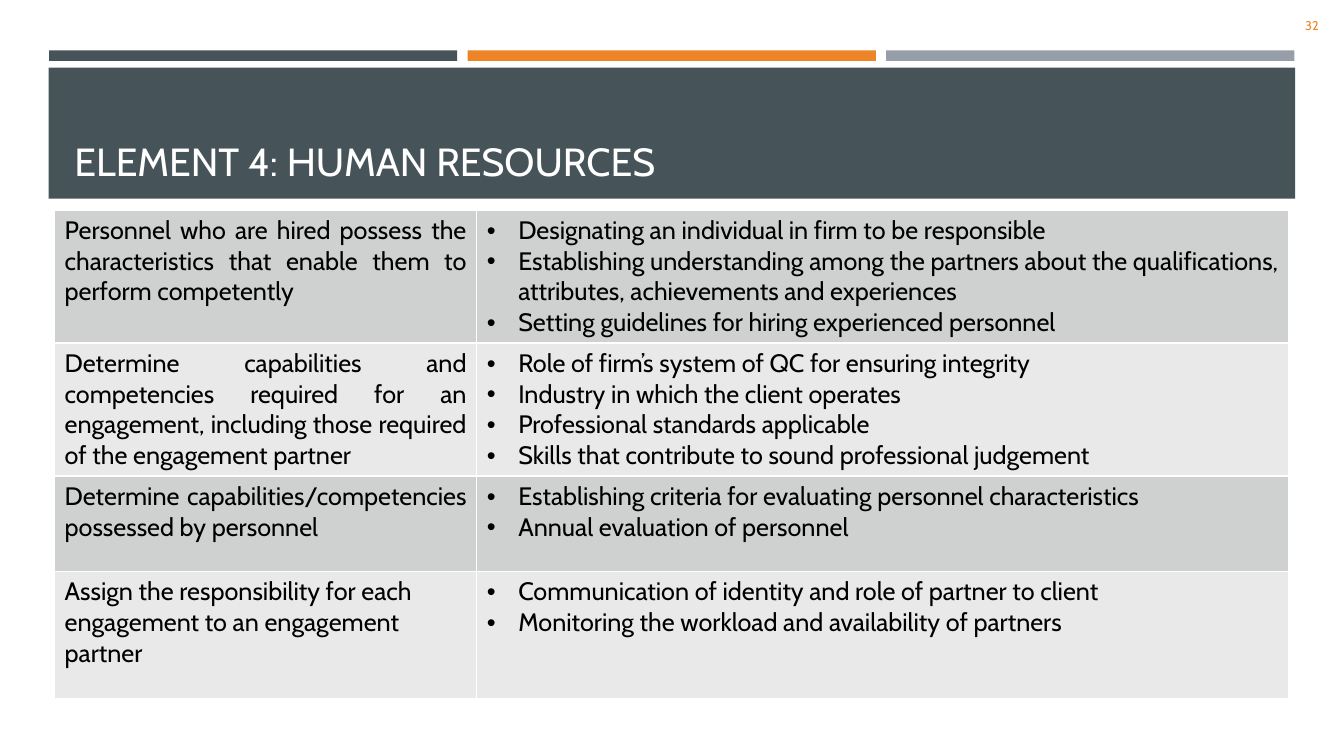
from lxml import etree
from pptx import Presentation
from pptx.dml.color import RGBColor
from pptx.enum.shapes import MSO_SHAPE
from pptx.enum.text import MSO_ANCHOR, MSO_AUTO_SIZE, PP_ALIGN
from pptx.oxml import parse_xml
from pptx.oxml.ns import nsdecls, qn
from pptx.util import Pt

RECT = MSO_SHAPE.RECTANGLE
MIDDLE, BOTTOM, TOP = MSO_ANCHOR.MIDDLE, MSO_ANCHOR.BOTTOM, MSO_ANCHOR.TOP
LEFT, RIGHT, JUSTIFY = PP_ALIGN.LEFT, PP_ALIGN.RIGHT, PP_ALIGN.JUSTIFY
NO_AUTOFIT = MSO_AUTO_SIZE.NONE

COLORS = {
    "slate": "465359", "orange": "ED8428", "gray": "969FA7",
    "white": "FFFFFF", "black": "000000",
    "band_dark": "CFD1D1", "band_light": "E9E9EA",
}
COL_WIDTHS = [301.5, 580]
ROW_HEIGHTS = [95, 95, 68, 91]
ROWS = [
    (JUSTIFY,
     ["Personnel who are hired possess the characteristics that enable them to perform competently"],
     ["Designating an individual in firm to be responsible",
      "Establishing understanding among the partners about the qualifications, "
      "attributes, achievements and experiences",
      "Setting guidelines for hiring experienced personnel"]),
    (JUSTIFY,
     ["Determine capabilities and competencies required for an engagement, "
      "including those required of the engagement partner"],
     ["Role of firm’s system of QC for ensuring integrity",
      "Industry in which the client operates",
      "Professional standards applicable",
      "Skills that contribute to sound professional judgement"]),
    (JUSTIFY,
     ["Determine capabilities/competencies possessed by personnel"],
     ["Establishing criteria for evaluating personnel characteristics",
      "Annual evaluation of personnel"]),
    (LEFT,
     ["Assign the responsibility for each", "engagement to an engagement", "partner"],
     ["Communication of identity and role of partner to client",
      "Monitoring the workload and availability of partners"]),
]


class SlideBuilder:
    """Draws styled elements on one slide, with lengths in points."""

    def __init__(self, slide, font="Cabin"):
        self.s = slide
        self.font = font

    def color(self, name):
        return RGBColor.from_string(COLORS[name])

    def fill_text(self, tf, lines, size, color, align=LEFT, bullet=False):
        tf.text = "\n".join(lines)
        tf.word_wrap = True
        for p in tf.paragraphs:
            p.alignment = align
            if bullet:
                pPr = p._p.get_or_add_pPr()
                pPr.set("marL", str(Pt(22.5)))
                pPr.set("indent", str(Pt(-22.5)))
                etree.SubElement(pPr, qn("a:buFont")).set("typeface", "Arial")
                etree.SubElement(pPr, qn("a:buChar")).set("char", "•")
            for r in p.runs:
                r.font.name = self.font
                r.font.size = Pt(size)
                r.font.color.rgb = self.color(color)

    def bar(self, x, y, w, h, color):
        sp = self.s.shapes.add_shape(RECT, Pt(x), Pt(y), Pt(w), Pt(h))
        sp.shadow.inherit = False
        sp.fill.solid()
        sp.fill.fore_color.rgb = self.color(color)
        sp.line.fill.background()

    def title(self, text, x, y, w, h):
        sp = self.s.shapes.title
        sp.left, sp.top, sp.width, sp.height = Pt(x), Pt(y), Pt(w), Pt(h)
        self.s.shapes._spTree.append(sp._element)
        tf = sp.text_frame
        tf.auto_size = NO_AUTOFIT
        tf.vertical_anchor = BOTTOM
        self.fill_text(tf, [text], 28, "white")

    def text(self, text, x, y, w, h, size, color, align):
        tf = self.s.shapes.add_textbox(Pt(x), Pt(y), Pt(w), Pt(h)).text_frame
        tf.vertical_anchor = MIDDLE
        self.fill_text(tf, [text], size, color, align)

    def cell(self, cell, lines, fill, align, bullet):
        self.fill_text(cell.text_frame, lines, 18, "black", align, bullet)
        cell.vertical_anchor = TOP
        tcPr = cell._tc.get_or_add_tcPr()
        for side in "LRTB":
            tcPr.append(parse_xml(
                f'<a:ln{side} {nsdecls("a")} w="{Pt(1)}"><a:solidFill>'
                f'<a:srgbClr val="{COLORS["white"]}"/></a:solidFill></a:ln{side}>'))
        cell.fill.solid()
        cell.fill.fore_color.rgb = self.color(fill)

    def table(self, rows, x, y, widths, heights):
        table = self.s.shapes.add_table(
            len(rows), len(widths), Pt(x), Pt(y), Pt(sum(widths)), Pt(sum(heights))).table
        table.first_row = table.horz_banding = False
        for col, width in zip(table.columns, widths):
            col.width = Pt(width)
        for i, (align, topic, points) in enumerate(rows):
            table.rows[i].height = Pt(heights[i])
            fill = "band_light" if i % 2 else "band_dark"
            self.cell(table.cell(i, 0), topic, fill, align, False)
            self.cell(table.cell(i, 1), points, fill, JUSTIFY, True)


def main():
    prs = Presentation()
    prs.slide_width, prs.slide_height = Pt(960), Pt(540)
    b = SlideBuilder(prs.slides.add_slide(prs.slide_layouts[5]))
    for i, color in enumerate(["slate", "orange", "gray"]):
        b.bar(35 + i * 299, 36, 291.6, 7.5, color)
    b.bar(34.8, 48.4, 890.4, 93.6, "slate")
    b.title("ELEMENT 4: HUMAN RESOURCES", 46, 55.4, 868, 80)
    b.text("32", 866, 3.6, 83, 29, 9, "orange", RIGHT)
    b.table(ROWS, 39, 150, COL_WIDTHS, ROW_HEIGHTS)
    prs.save("out.pptx")


if __name__ == "__main__":
    main()
